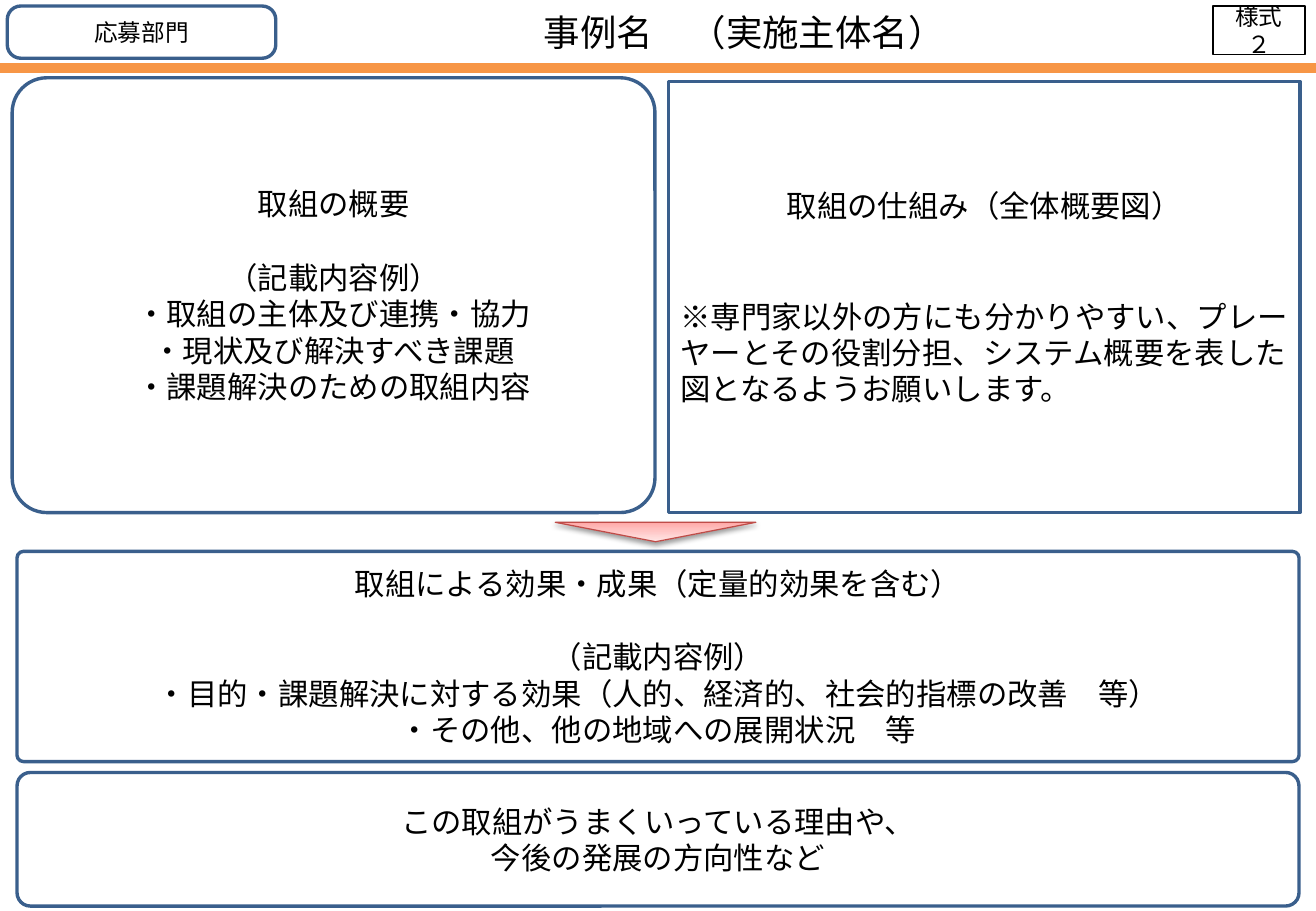
from copy import deepcopy
from pptx import Presentation
from pptx.dml.color import RGBColor
from pptx.enum.shapes import MSO_SHAPE
from pptx.enum.text import MSO_ANCHOR, PP_ALIGN
from pptx.oxml import parse_xml
from pptx.oxml.ns import nsdecls, qn
from pptx.util import Inches, Pt

BLACK = RGBColor(0x00, 0x00, 0x00)
BLUE = RGBColor(0x3A, 0x5F, 0x8C)
ORANGE = RGBColor(0xF7, 0x96, 0x46)
RED = RGBColor(0xBF, 0x4C, 0x48)
ARROW_STOPS = [
    (0, RGBColor(0xFF, 0xA6, 0xA5)),
    (0.35, RGBColor(0xFF, 0xC0, 0xBF)),
    (1, RGBColor(0xFF, 0xE7, 0xE7)),
]
FONT = "Calibri"
BLANK_LINE = 22  # points, height of one 18-point line


class CaseSheet:
    def __init__(self, page):
        self.page = page

    def set_lines(self, shape, lines, size, gaps=None, left_lines=()):
        """Fill a shape with lines; gaps maps a line index to space before it."""
        frame = shape.text_frame
        frame.word_wrap = True
        frame.vertical_anchor = MSO_ANCHOR.MIDDLE
        frame.text = "\n".join(lines)
        for index, para in enumerate(frame.paragraphs):
            para.alignment = PP_ALIGN.LEFT if index in left_lines else PP_ALIGN.CENTER
            para.space_before = Pt((gaps or {}).get(index, 0))
            for span in para.runs:
                span.font.name = FONT
                span.font.size = Pt(size)
                span.font.color.rgb = BLACK

    def shape(self, kind, place, line=None, width=2):
        shape = self.page.shapes.add_shape(kind, *map(Inches, place))
        shape.shadow.inherit = False
        shape.fill.background()
        if line is None:
            shape.line.fill.background()
        else:
            shape.line.color.rgb = line
            shape.line.width = Pt(width)
        return shape

    def bar(self, place, color):
        bar = self.shape(MSO_SHAPE.RECTANGLE, place)
        bar.fill.solid()
        bar.fill.fore_color.rgb = color

    def title(self, place, text, size):
        box = self.page.shapes.add_textbox(*map(Inches, place))
        self.set_lines(box, [text], size)

    def box(self, place, lines, size=18, rounding=0, line=BLUE, width=2, **layout):
        kind = MSO_SHAPE.ROUNDED_RECTANGLE if rounding else MSO_SHAPE.RECTANGLE
        box = self.shape(kind, place, line, width)
        if rounding:
            box.adjustments[0] = rounding
        self.set_lines(box, lines, size, **layout)

    def down_arrow(self, place):
        arrow = self.shape(MSO_SHAPE.ISOSCELES_TRIANGLE, place, RED, 0.75)
        arrow.rotation = 180
        arrow.fill.gradient()
        arrow.fill.gradient_angle = 90
        # The default gradient has two stops; add a third
        properties = arrow._element.spPr
        stop_list = properties.find(qn("a:gradFill")).find(qn("a:gsLst"))
        stop_list.append(deepcopy(stop_list[-1]))
        for stop, (position, color) in zip(arrow.fill.gradient_stops, ARROW_STOPS):
            stop.position = position
            stop.color.rgb = color
        # Soft shadow below
        properties.find(qn("a:effectLst")).append(parse_xml(
            f'<a:outerShdw {nsdecls("a")} blurRad="{Pt(3.1)}" dist="{Pt(1.6)}" '
            'dir="5400000" rotWithShape="0"><a:srgbClr val="000000">'
            '<a:alpha val="38000"/></a:srgbClr></a:outerShdw>'))


def main():
    deck = Presentation()
    deck.slide_width, deck.slide_height = Inches(10.83), Inches(7.5)
    sheet = CaseSheet(deck.slides.add_slide(deck.slide_layouts[6]))

    # Header
    sheet.bar((0, 0.52, 10.83, 0.08), ORANGE)
    sheet.title((2.19, 0.05, 7.87, 0.42), "事例名　（実施主体名）", 21.6)

    # Overview and scheme
    sheet.box((0.1, 0.64, 5.29, 3.58), [
        "取組の概要",
        "（記載内容例）",
        "・取組の主体及び連携・協力",
        "・現状及び解決すべき課題",
        "・課題解決のための取組内容",
    ], rounding=0.08, gaps={1: BLANK_LINE})
    sheet.box((5.5, 0.67, 5.2, 3.55), [
        "取組の仕組み（全体概要図）",
        "※専門家以外の方にも分かりやすい、プレーヤーとその役割分担、"
        "システム概要を表した図となるようお願いします。",
    ], gaps={1: 2 * BLANK_LINE}, left_lines=(1,))

    # Results and outlook
    sheet.down_arrow((4.57, 4.3, 1.65, 0.16))
    sheet.box((0.14, 4.54, 10.55, 1.73), [
        "取組による効果・成果（定量的効果を含む）",
        "（記載内容例）",
        "・目的・課題解決に対する効果（人的、経済的、社会的指標の改善　等）",
        "・その他、他の地域への展開状況　等",
    ], rounding=0.03, gaps={1: BLANK_LINE})
    sheet.box((0.14, 6.36, 10.55, 1.1), [
        "この取組がうまくいっている理由や、",
        "今後の発展の方向性など",
    ], rounding=0.1)

    # Corner labels
    sheet.box((9.98, 0.05, 0.76, 0.4), ["様式２"], size=14, line=BLACK, width=1)
    sheet.box((0.06, 0.05, 2.21, 0.43), ["応募部門"], size=14, rounding=0.26)

    deck.save("out.pptx")


if __name__ == "__main__":
    main()
